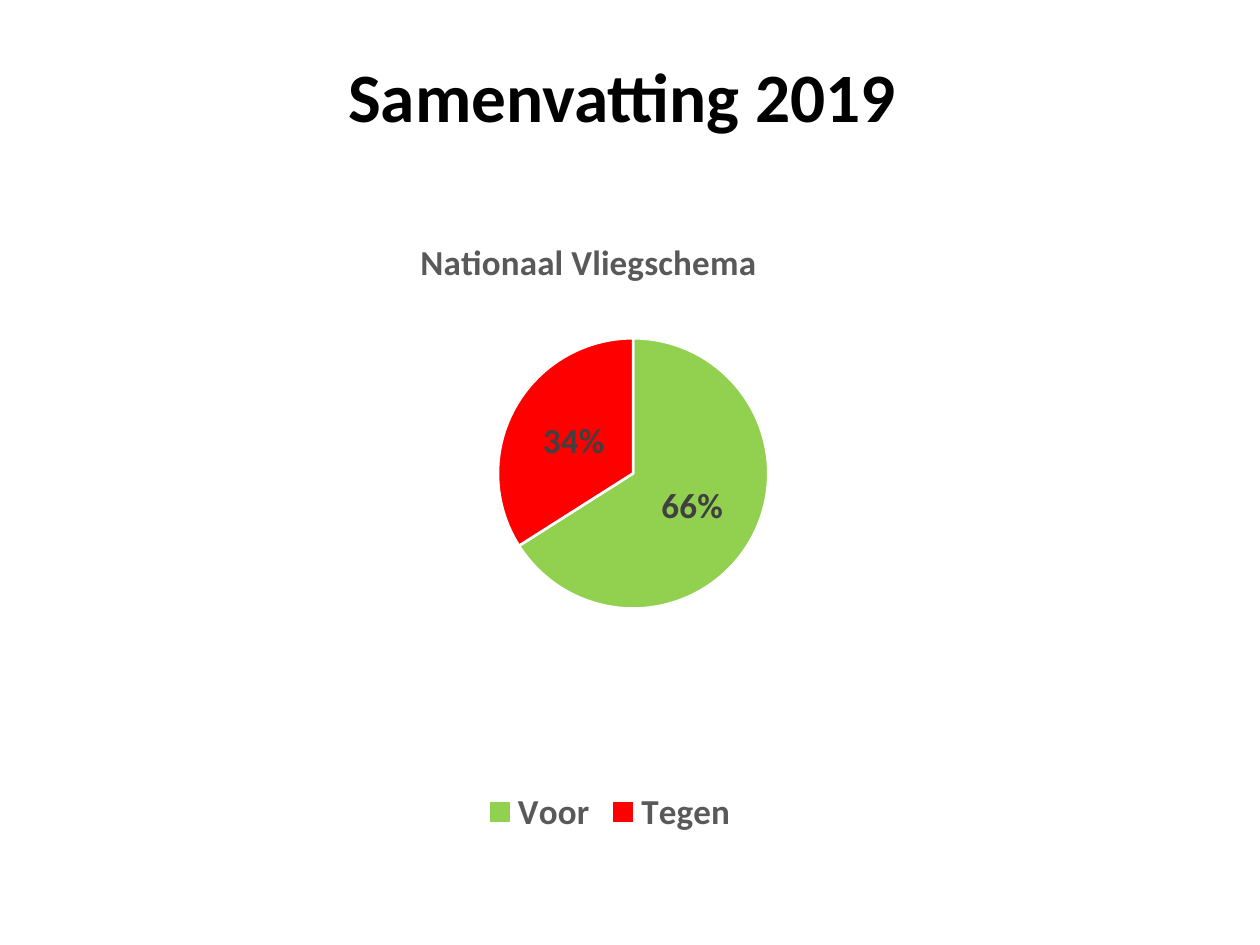
import dataclasses

import lxml.etree
import pptx
import pptx.chart.data
import pptx.dml.color
import pptx.enum.chart
import pptx.enum.text
import pptx.oxml.ns
import pptx.util

Inches = pptx.util.Inches
FONT = "Calibri"
GREY = "595959"


@dataclasses.dataclass(frozen=True)
class Vote:
    label: str
    percent: int
    color: str


VOTES = [Vote("Voor", 66, "92D050"), Vote("Tegen", 34, "FF0000")]


def rgb(color: str) -> pptx.dml.color.RGBColor:
    return pptx.dml.color.RGBColor.from_string(color)


def format_font(font, size: float, color: str, bold: bool = True) -> None:
    font.name = FONT
    font.size = pptx.util.Pt(size)
    font.bold = bold
    font.color.rgb = rgb(color)


def write_text(text_frame, text: str, *, size: float, color: str, bold: bool = True) -> None:
    paragraph = text_frame.paragraphs[0]
    paragraph.alignment = pptx.enum.text.PP_ALIGN.CENTER
    run = paragraph.add_run()
    run.text = text
    format_font(run.font, size, color, bold)


def set_layout(parent, index: int, **settings: object) -> None:
    qn = pptx.oxml.ns.qn
    for old_layout in parent.findall(qn("c:layout")):
        parent.remove(old_layout)
    layout = lxml.etree.Element(qn("c:layout"))
    manual = lxml.etree.SubElement(layout, qn("c:manualLayout"))
    for name, value in settings.items():
        lxml.etree.SubElement(manual, qn(f"c:{name}")).set("val", str(value))
    parent.insert(index, layout)


def add_title(slide, text: str) -> None:
    shape = slide.shapes.add_textbox(Inches(0.75), Inches(0.36), Inches(8.5), Inches(0.79))
    shape.text_frame.word_wrap = True
    shape.text_frame.vertical_anchor = pptx.enum.text.MSO_ANCHOR.MIDDLE
    write_text(shape.text_frame, text, size=39.6, color="000000")


def add_vote_chart(slide, title: str, votes: list[Vote]) -> None:
    data = pptx.chart.data.CategoryChartData()
    data.categories = [vote.label for vote in votes]
    data.add_series("Series 1", [vote.percent for vote in votes])
    chart = slide.shapes.add_chart(
        pptx.enum.chart.XL_CHART_TYPE.PIE,
        Inches(1.14), Inches(1.47), Inches(7.4), Inches(5.2), data,
    ).chart
    format_font(chart.font, 10, "000000", bold=False)

    chart.has_title = True
    write_text(chart.chart_title.text_frame, title, size=20, color=GREY)
    chart.chart_title.include_in_layout = False
    set_layout(chart.chart_title._element, 1, xMode="edge", yMode="edge", x=0.29, y=0.07)

    chart.has_legend = True
    chart.legend.position = pptx.enum.chart.XL_LEGEND_POSITION.BOTTOM
    chart.legend.include_in_layout = False
    format_font(chart.legend.font, 20, GREY)

    plot = chart.plots[0]
    plot.vary_by_categories = True
    set_layout(
        plot._element.getparent(), 0, layoutTarget="inner", xMode="edge", yMode="edge",
        x=0.38, y=0.2, w=0.29, h=0.48,
    )
    series = plot.series[0]
    for index, vote in enumerate(votes):
        point_format = series.points[index].format
        point_format.fill.solid()
        point_format.fill.fore_color.rgb = rgb(vote.color)
        point_format.line.color.rgb = rgb("FFFFFF")
        point_format.line.width = pptx.util.Pt(1.5)

    labels = series.data_labels
    labels.show_percentage = True
    labels.show_value = False
    labels.number_format = "0%"
    labels.number_format_is_linked = False
    labels.position = pptx.enum.chart.XL_LABEL_POSITION.CENTER
    format_font(labels.font, 20, "404040")


def main() -> None:
    """Build the slide that sums up the 2019 vote."""
    presentation = pptx.Presentation()
    presentation.slide_width = Inches(10)
    presentation.slide_height = Inches(7.5)
    slide = presentation.slides.add_slide(presentation.slide_layouts[6])
    add_title(slide, "Samenvatting 2019 ")
    add_vote_chart(slide, "Nationaal Vliegschema", VOTES)
    presentation.save("out.pptx")


if __name__ == "__main__":
    main()
